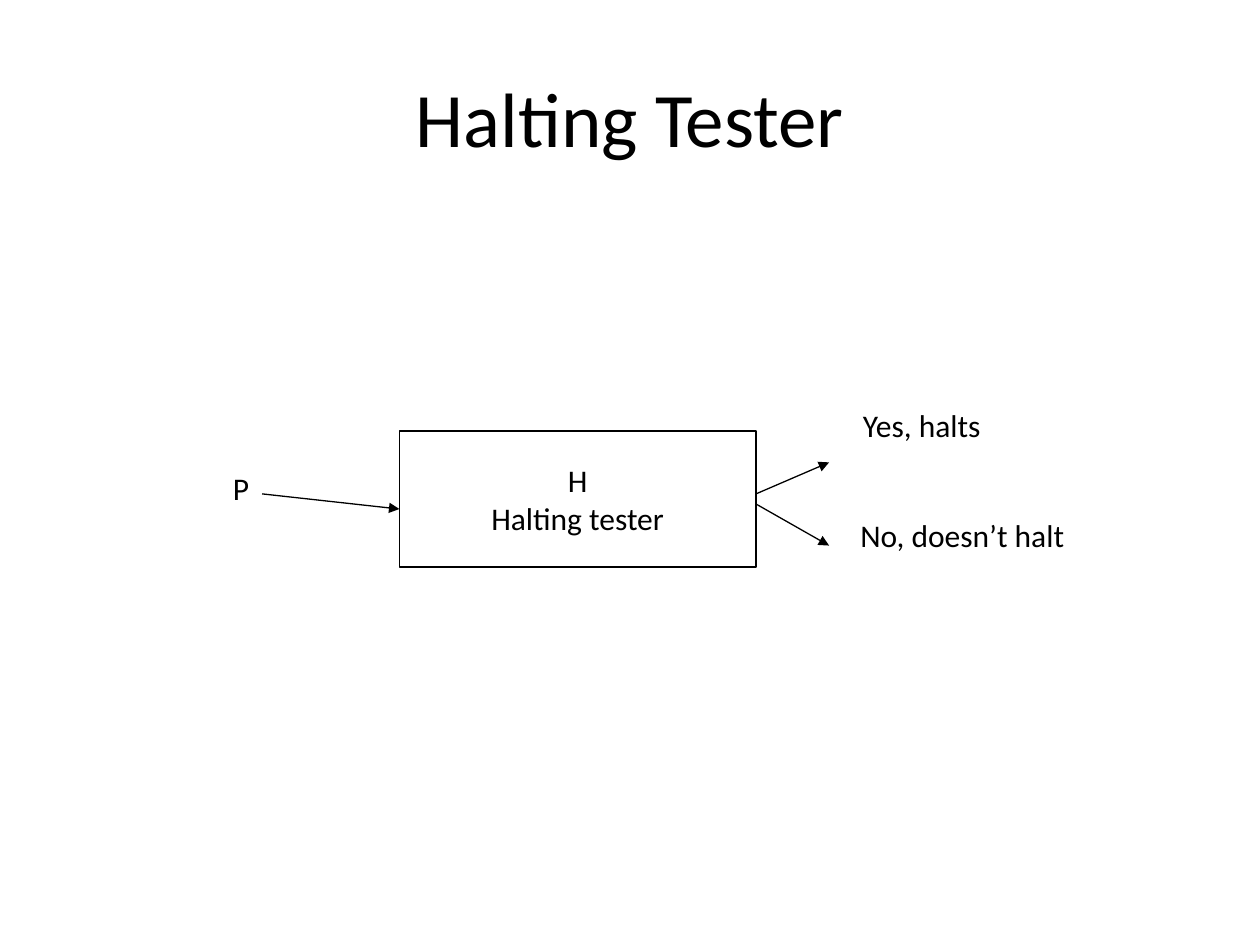
import pptx
import pptx.util
import pptx.dml.color
import pptx.enum.shapes
import pptx.enum.text
import pptx.oxml.ns
from lxml import etree
from pptx.util import Inches

FONT = "Calibri"
BLACK = "000000"
LINE_WIDTH = 0.75


def color(hex_string):
    return pptx.dml.color.RGBColor.from_string(hex_string)


def write_lines(text_frame, lines, size, alignment):
    for index, text in enumerate(lines):
        paragraph = text_frame.paragraphs[0] if index == 0 else text_frame.add_paragraph()
        paragraph.alignment = alignment
        run = paragraph.add_run()
        run.text = text
        run.font.name = FONT
        run.font.size = pptx.util.Pt(size)
        run.font.color.rgb = color(BLACK)


def style_line(line):
    line.color.rgb = color(BLACK)
    line.width = pptx.util.Pt(LINE_WIDTH)


def add_title(slide, text):
    title = slide.shapes.title
    title.left, title.top = Inches(0.5), Inches(0.3)
    title.width, title.height = Inches(9), Inches(1.25)
    title.text_frame.vertical_anchor = pptx.enum.text.MSO_ANCHOR.MIDDLE
    write_lines(title.text_frame, [text], 44, pptx.enum.text.PP_ALIGN.CENTER)


def add_box(slide, lines, left, top, width, height):
    box = slide.shapes.add_shape(
        pptx.enum.shapes.MSO_SHAPE.RECTANGLE,
        Inches(left), Inches(top), Inches(width), Inches(height))
    box.shadow.inherit = False
    box.fill.background()
    style_line(box.line)
    box.text_frame.word_wrap = False
    box.text_frame.vertical_anchor = pptx.enum.text.MSO_ANCHOR.MIDDLE
    write_lines(box.text_frame, lines, 18, pptx.enum.text.PP_ALIGN.CENTER)


def add_label(slide, text, left, top, width, height):
    label = slide.shapes.add_textbox(
        Inches(left), Inches(top), Inches(width), Inches(height))
    label.text_frame.word_wrap = False
    label.text_frame.auto_size = pptx.enum.text.MSO_AUTO_SIZE.SHAPE_TO_FIT_TEXT
    write_lines(label.text_frame, [text], 18, pptx.enum.text.PP_ALIGN.LEFT)


def add_arrow(slide, start_x, start_y, end_x, end_y):
    arrow = slide.shapes.add_connector(
        pptx.enum.shapes.MSO_CONNECTOR.STRAIGHT,
        Inches(start_x), Inches(start_y), Inches(end_x), Inches(end_y))
    style_line(arrow.line)
    properties = arrow.element.spPr
    outline = properties.find(pptx.oxml.ns.qn("a:ln"))
    etree.SubElement(outline, pptx.oxml.ns.qn("a:tailEnd"), type="triangle")
    etree.SubElement(properties, pptx.oxml.ns.qn("a:effectLst"))


def main():
    presentation = pptx.Presentation()
    presentation.slide_width = Inches(10)
    presentation.slide_height = Inches(7.5)
    slide = presentation.slides.add_slide(presentation.slide_layouts[5])

    box_left, box_width = 3.17, 2.83
    box_right = box_left + box_width
    output_x = 6.58

    add_title(slide, "Halting Tester")
    add_box(slide, ["H", "Halting tester"], box_left, 3.42, box_width, 1.08)
    add_label(slide, "P", 1.75, 3.67, 0.39, 0.5)
    add_arrow(slide, 2.08, 3.92, box_left, 4.04)
    add_arrow(slide, box_right, 3.92, output_x, 3.67)
    add_arrow(slide, box_right, 4, output_x, 4.33)
    add_label(slide, "Yes, halts", 6.75, 3.17, 1.15, 0.4)
    add_label(slide, "No, doesn’t halt", 6.73, 4.05, 1.84, 0.4)

    presentation.save("out.pptx")


if __name__ == "__main__":
    main()
